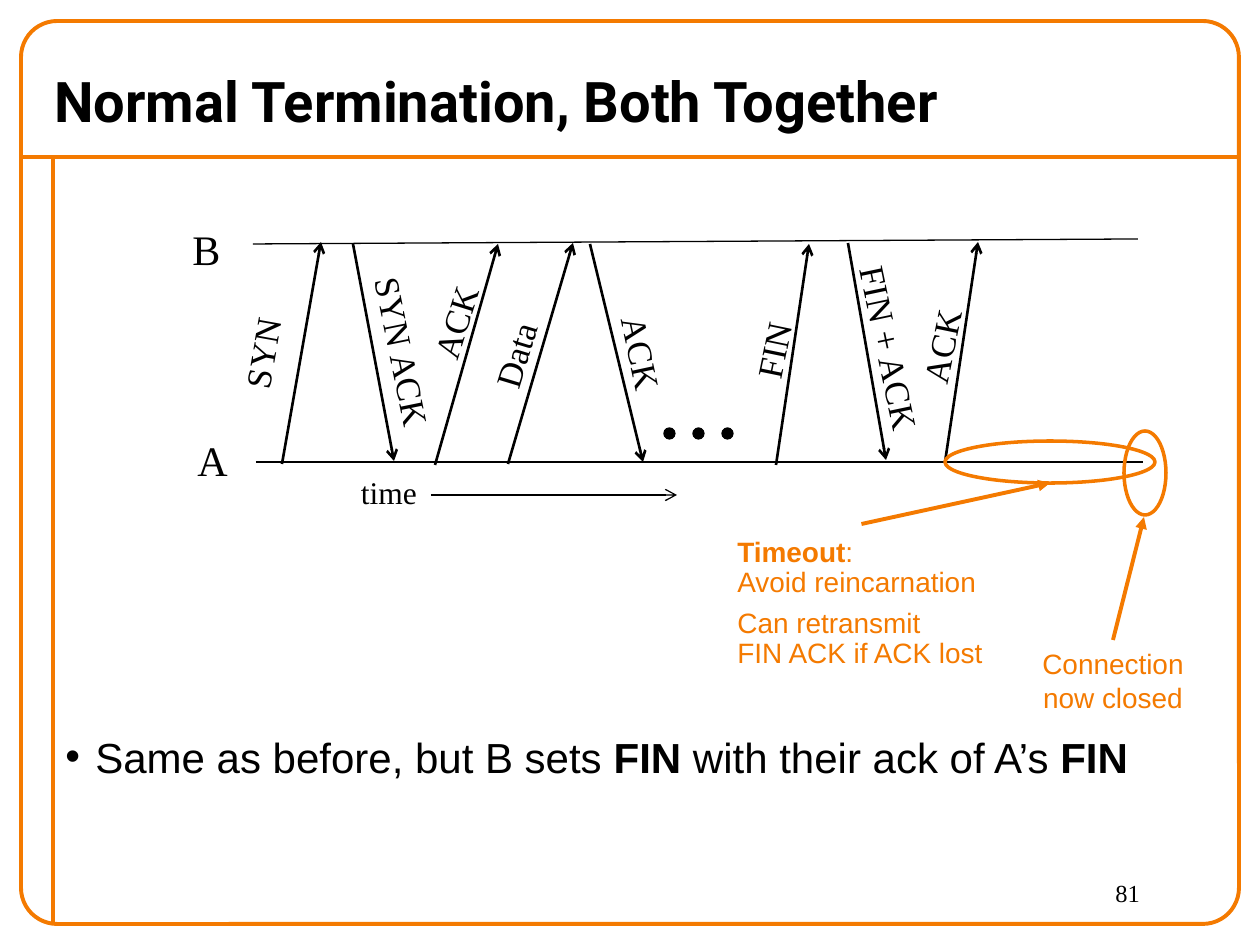
"""Builds the slide on closing a connection when both ends finish together."""
from lxml.etree import SubElement
from pptx import Presentation
from pptx.dml.color import RGBColor
from pptx.enum.shapes import MSO_CONNECTOR, MSO_SHAPE
from pptx.enum.text import MSO_ANCHOR as ANCHOR, MSO_AUTO_SIZE as AUTO_SIZE, PP_ALIGN as ALIGN
from pptx.oxml.ns import qn
from pptx.util import Pt

EMU_PER_PX = 914400 / 126
ORANGE = RGBColor(0xF4, 0x7A, 0x00)
BLACK = RGBColor(0x00, 0x00, 0x00)
SERIF, SANS, HEADING = "Times New Roman", "Arial", "Roboto"

MESSAGES = [
    # text, arrow start, arrow end, label centre, label width, rotation
    ("SYN", (282, 464), (321, 242), (262, 353), 96, 280.1),
    ("SYN ACK", (353, 244), (394, 461), (403, 352), 178, 78.5),
    ("ACK", (435, 465), (498, 244), (455, 322), 100, 287.4),
    ("Data", (508, 464), (573, 243), (515, 355), 92, 286.7),
    ("ACK", (590, 244), (643, 462), (642, 353), 100, 77.9),
    ("FIN", (776, 465), (809, 244), (773, 350), 82, 281.6),
    ("FIN + ACK", (848, 243), (886, 460), (890, 348), 193, 78.1),
    ("ACK", (945, 462), (978, 242), (941, 346), 100, 281.6),
]
LABEL_HEIGHT = 54
CENTRED = {"alignment": ALIGN.CENTER}
MIDDLE_NO_WRAP = {"word_wrap": False, "vertical_anchor": ANCHOR.MIDDLE, "auto_size": AUTO_SIZE.NONE}
WRAPPED = {"word_wrap": True, "vertical_anchor": ANCHOR.TOP}


def px(*lengths):
    """Turn pixel lengths into EMU."""
    return [round(length * EMU_PER_PX) for length in lengths]


def apply_format(target, values):
    """Set each named attribute on the target."""
    for name, value in values.items():
        setattr(target, name, value)


def add_line(slide, start, end, color, width, head=None):
    """Draw a straight connector, with an arrowhead if one is named."""
    line = slide.shapes.add_connector(MSO_CONNECTOR.STRAIGHT, *px(*start, *end))
    line.line.color.rgb = color
    line.line.width = Pt(width)
    if head:
        SubElement(line.line._get_or_add_ln(), qn("a:tailEnd"), type=head)
    SubElement(line._element.spPr, qn("a:effectLst"))
    return line


def add_outline(slide, kind, box, color, width, fill=None):
    """Draw a preset shape, hollow unless a fill is given."""
    shape = slide.shapes.add_shape(kind, *px(*box))
    shape.shadow.inherit = False
    shape.line.color.rgb = color
    shape.line.width = Pt(width)
    if fill is None:
        shape.fill.background()
    else:
        shape.fill.solid()
        shape.fill.fore_color.rgb = fill
    return shape


def add_text(slide, box, paragraphs, font, size, color=BLACK, frame=MIDDLE_NO_WRAP):
    """Add a text box from (runs, paragraph format) pairs of (text, bold) runs."""
    shape = slide.shapes.add_textbox(*px(*box))
    text_frame = shape.text_frame
    apply_format(text_frame, frame)
    for index, (runs, values) in enumerate(paragraphs):
        paragraph = text_frame.add_paragraph() if index else text_frame.paragraphs[0]
        apply_format(paragraph, values)
        for text, bold in runs:
            for part, words in enumerate(text.split("\n")):
                if part:
                    paragraph.add_line_break()
                run = paragraph.add_run()
                run.text = words
                apply_format(run.font, {"name": font, "size": Pt(size), "bold": bold})
                run.font.color.rgb = color
    return shape


def add_label(slide, box, text, size, rotation=0):
    """Add a centred serif label."""
    label = add_text(slide, box, [([(text, False)], CENTRED)], SERIF, size)
    label.rotation = rotation


def add_bullet(paragraph, indent):
    """Give a paragraph a round bullet with a hanging indent."""
    (width,) = px(indent)
    properties = paragraph._p.get_or_add_pPr()
    apply_format(properties, {})
    properties.set("marL", str(width))
    properties.set("indent", str(-width))
    SubElement(properties, qn("a:buFont"), typeface=SANS)
    SubElement(properties, qn("a:buChar"), char="•")


def add_message(slide, text, start, end, centre, width, rotation):
    """Draw one message arrow with its slanted label."""
    add_line(slide, start, end, BLACK, 1.5, "arrow")
    left, top = centre[0] - width / 2, centre[1] - LABEL_HEIGHT / 2
    add_label(slide, (left, top, width, LABEL_HEIGHT), text, 20, rotation)


def add_callout(slide, oval, box, paragraphs, tip):
    """Ring a part of the timeline and point to it from a note."""
    add_outline(slide, MSO_SHAPE.OVAL, oval, ORANGE, 2)
    note = add_text(slide, box, paragraphs, SANS, 16, ORANGE)
    arrow = add_line(slide, (box[0] + box[2] / 2, box[1]), tip, ORANGE, 2.25, "triangle")
    arrow.begin_connect(note, 0)


def add_frame(slide):
    """Draw the orange border and rules."""
    add_line(slide, (21, 157), (1239, 157), ORANGE, 2.25)
    add_line(slide, (53, 157), (53, 924), ORANGE, 2.25)
    border = add_outline(slide, MSO_SHAPE.ROUNDED_RECTANGLE, (21, 21, 1218, 903), ORANGE, 2.25)
    border.adjustments[0] = 0.04


def add_timeline(slide):
    """Draw both hosts, the time axis, the messages and the ellipsis."""
    add_line(slide, (253, 244), (1138, 239), BLACK, 0.75)
    add_line(slide, (256, 462), (1143, 462), BLACK, 0.75)
    add_line(slide, (431, 495), (677, 495), BLACK, 0.75, "arrow")
    add_label(slide, (180, 217, 53, 63), "B", 24)
    add_label(slide, (185, 428, 55, 63), "A", 24)
    add_label(slide, (348, 467, 82, 50), "time", 18)
    for message in MESSAGES:
        add_message(slide, *message)
    for index in range(3):
        add_outline(slide, MSO_SHAPE.OVAL, (664 + 29 * index, 428, 11, 11), BLACK, 0.75, BLACK)


def main():
    """Build and save the slide."""
    presentation = Presentation()
    width, height = px(1260, 945)
    apply_format(presentation, {"slide_width": width, "slide_height": height})
    slide = presentation.slides.add_slide(presentation.slide_layouts[6])

    add_frame(slide)
    title = [([("Normal Termination, Both Together", True)], {})]
    add_text(slide, (42, 53, 1197, 95), title, HEADING, 32,
             frame={"word_wrap": True, "vertical_anchor": ANCHOR.MIDDLE})
    add_timeline(slide)

    closed = [([("Connection\nnow closed", False)], CENTRED)]
    add_callout(slide, (1124, 431, 42, 84), (1029, 640, 168, 81), closed, (1144, 517))
    timeout = [
        ([("Timeout", True), (":", False)], {}),
        ([("Avoid reincarnation", False)], {"line_spacing": 0.4, "space_before": Pt(8)}),
        ([("Can retransmit\nFIN ACK if ACK lost", False)],
         {"line_spacing": 0.9, "space_before": Pt(8)}),
    ]
    add_callout(slide, (945, 441, 210, 42), (725, 524, 273, 156), timeout, (1050, 483))

    summary = [([("Same as before, but B sets ", False), ("FIN", True),
                 (" with their ack of A’s ", False), ("FIN", True)], {})]
    body = add_text(slide, (53, 725, 1166, 95), summary, SANS, 24, frame=WRAPPED)
    add_bullet(body.text_frame.paragraphs[0], 30)
    add_text(slide, (1103, 872, 126, 53), [([("81", False)], {})], SERIF, 14, frame=WRAPPED)
    presentation.save("out.pptx")


if __name__ == "__main__":
    main()
